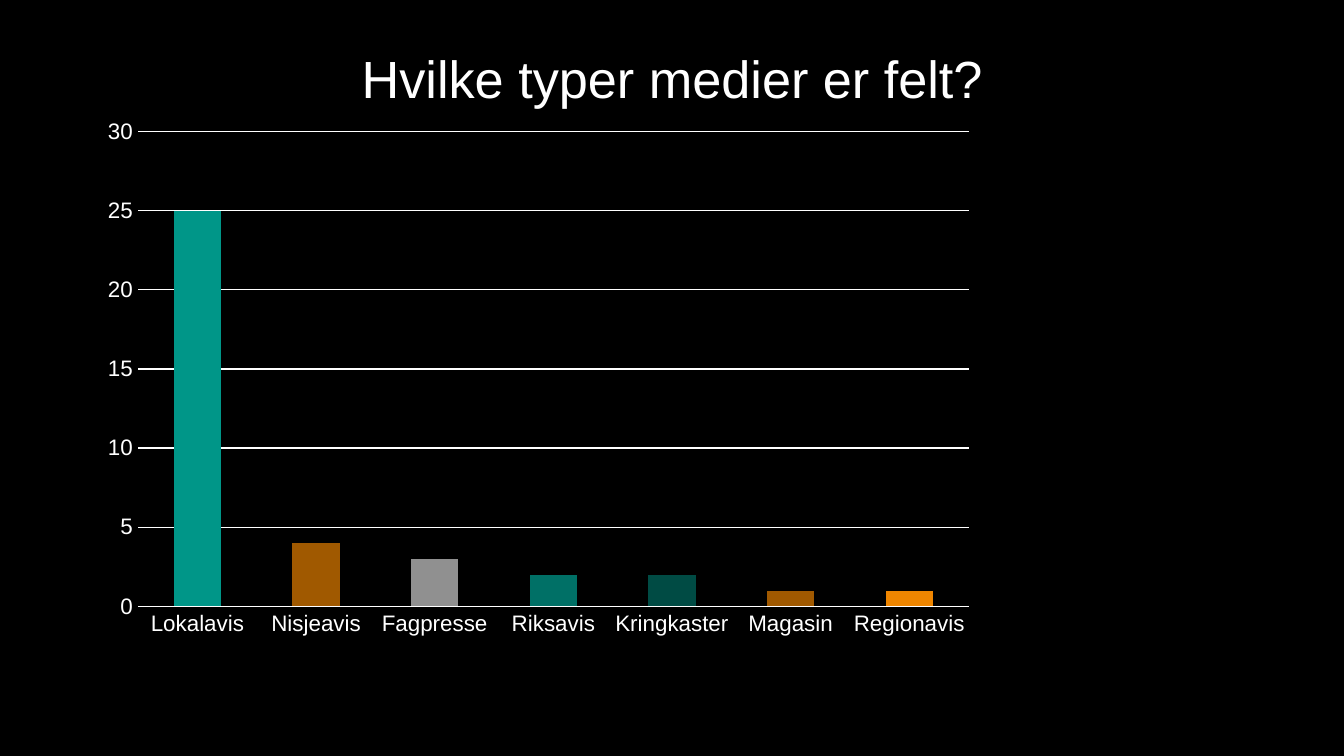
from pptx import Presentation
from pptx.chart.data import CategoryChartData
from pptx.dml.color import RGBColor
from pptx.enum.chart import XL_CHART_TYPE, XL_TICK_MARK
from pptx.enum.text import MSO_ANCHOR, PP_ALIGN
from pptx.util import Inches, Pt

FONT = "Arial"
WHITE = "FFFFFF"
MEDIA_TYPES = [
    ("Lokalavis", 25, "009688"),
    ("Nisjeavis", 4, "A05900"),
    ("Fagpresse", 3, "909090"),
    ("Riksavis", 2, "007066"),
    ("Kringkaster", 2, "004B44"),
    ("Magasin", 1, "A05900"),
    ("Regionavis", 1, "EF8600"),
]


def rgb(value):
    return RGBColor.from_string(value)


def set_fill(fill, color):
    fill.solid()
    fill.fore_color.rgb = rgb(color)


def set_font(font, size):
    font.name = FONT
    font.size = Pt(size)
    font.color.rgb = rgb(WHITE)


def set_line(line):
    line.color.rgb = rgb(WHITE)
    line.width = Pt(0.75)


def add_title(slide, text):
    box = slide.shapes.add_textbox(
        Inches(0.34), Inches(0.12), Inches(9.32), Inches(0.92))
    tf = box.text_frame
    tf.word_wrap = True
    tf.vertical_anchor = MSO_ANCHOR.MIDDLE
    tf.margin_left = tf.margin_right = Inches(0.1)
    tf.margin_top = tf.margin_bottom = Inches(0.1)
    p = tf.paragraphs[0]
    p.text = text
    p.alignment = PP_ALIGN.CENTER
    set_font(p.font, 28)


def style_axis(axis):
    axis.major_tick_mark = XL_TICK_MARK.NONE
    axis.minor_tick_mark = XL_TICK_MARK.NONE
    set_font(axis.tick_labels.font, 12)


def add_media_chart(slide):
    names, counts, colors = zip(*MEDIA_TYPES)
    data = CategoryChartData()
    data.categories = names
    data.add_series("Series 1", counts)
    chart = slide.shapes.add_chart(
        XL_CHART_TYPE.COLUMN_STACKED,
        Inches(0.67), Inches(0.81), Inches(6.67), Inches(4), data).chart
    chart.has_legend = False
    chart.has_title = False
    set_font(chart.font, 10)

    style_axis(chart.category_axis)
    set_line(chart.category_axis.format.line)

    counts_axis = chart.value_axis
    style_axis(counts_axis)
    counts_axis.minimum_scale = 0
    counts_axis.maximum_scale = 30
    counts_axis.major_unit = 5
    counts_axis.format.line.fill.background()
    set_line(counts_axis.major_gridlines.format.line)

    plot = chart.plots[0]
    plot.vary_by_categories = False
    plot.gap_width = 150
    plot.overlap = 100
    series = plot.series[0]
    set_fill(series.format.fill, colors[0])
    for i, color in enumerate(colors[1:], 1):
        set_fill(series.points[i].format.fill, color)


def main():
    prs = Presentation()
    prs.slide_width = Inches(10)
    prs.slide_height = Inches(10) * 9 // 16
    slide = prs.slides.add_slide(prs.slide_layouts[6])
    set_fill(slide.background.fill, "000000")
    add_title(slide, "Hvilke typer medier er felt?")
    add_media_chart(slide)
    prs.save("out.pptx")


if __name__ == "__main__":
    main()
